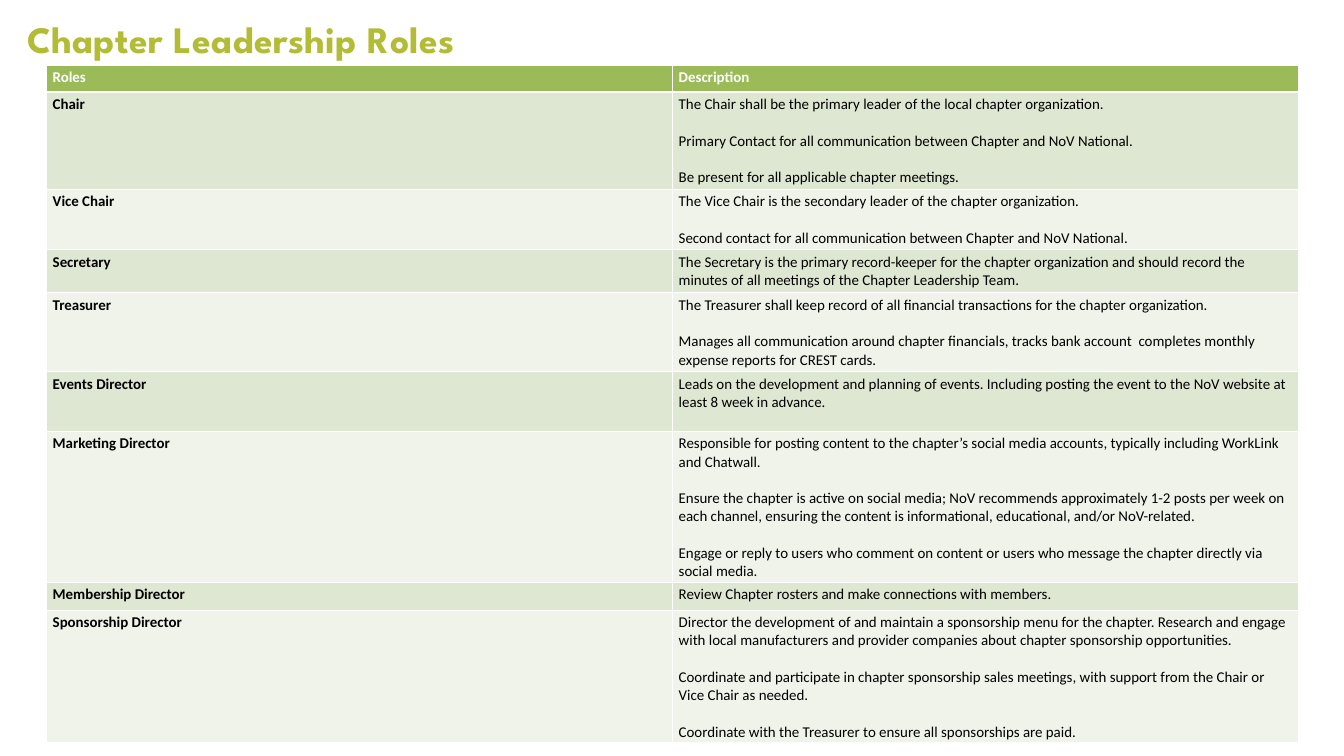
from dataclasses import dataclass

from lxml.etree import SubElement
from pptx import Presentation
from pptx.dml.color import RGBColor
from pptx.enum.text import MSO_ANCHOR, MSO_AUTO_SIZE, PP_ALIGN
from pptx.oxml.ns import qn
from pptx.util import Emu, Pt


@dataclass(frozen=True)
class Theme:
    title: str = "B3BC35"
    header: str = "9BBB59"
    bands: tuple = ("DEE7D1", "EFF3EA")
    white: str = "FFFFFF"
    black: str = "000000"
    title_font: str = "League Spartan"
    body_font: str = "Calibri"
    title_size: int = 40
    body_size: int = 16
    paragraph_gap: float = 19.5
    border: int = 1
    header_border: int = 3


THEME = Theme()

HEADER = ("Roles", ["Description"], 27)

# Role, description paragraphs, row height in px
ROLES = [
    ("Chair", [
        "The Chair shall be the primary leader of the local chapter organization.",
        "Primary Contact for all communication between Chapter and NoV National.",
        "Be present for all applicable chapter meetings."], 97),
    ("Vice Chair", [
        "The Vice Chair is the secondary leader of the chapter organization.",
        "Second contact for all communication between Chapter and NoV National."], 60),
    ("Secretary", [
        "The Secretary is the primary record-keeper for the chapter organization and should "
        "record the minutes of all meetings of the Chapter Leadership Team."], 43),
    ("Treasurer", [
        "The Treasurer shall keep record of all financial transactions for the chapter "
        "organization.",
        "Manages all communication around chapter financials, tracks bank account  completes "
        "monthly expense reports for CREST cards."], 78),
    ("Events Director", [
        "Leads on the development and planning of events. Including posting the event to the "
        "NoV website at least 8 week in advance."], 60),
    ("Marketing Director", [
        "Responsible for posting content to the chapter’s social media accounts, typically "
        "including WorkLink and Chatwall.",
        "Ensure the chapter is active on social media; NoV recommends approximately 1-2 posts "
        "per week on each channel, ensuring the content is informational, educational, and/or "
        "NoV-related.",
        "Engage or reply to users who comment on content or users who message the chapter "
        "directly via social media."], 150),
    ("Membership Director", [
        "Review Chapter rosters and make connections with members."], 28),
    ("Sponsorship Director", [
        "Director the development of and maintain a sponsorship menu for the chapter. Research "
        "and engage with local manufacturers and provider companies about chapter sponsorship "
        "opportunities.",
        "Coordinate and participate in chapter sponsorship sales meetings, with support from "
        "the Chair or Vice Chair as needed.",
        "Coordinate with the Treasurer to ensure all sponsorships are paid."], 132),
]


def px(n):
    return Emu(round(n * 914400 / 67.2))


def set_font(font, name, size, color, bold):
    font.name, font.size, font.bold = name, Pt(size), bold
    font.color.rgb = RGBColor.from_string(color)


def add_title(s, text):
    sp = s.shapes.title
    sp.left, sp.top, sp.width, sp.height = px(26), px(15), px(1218), px(46)
    tf = sp.text_frame
    tf.auto_size = MSO_AUTO_SIZE.SHAPE_TO_FIT_TEXT
    tf.vertical_anchor = MSO_ANCHOR.MIDDLE
    tf.margin_left, tf.margin_top, tf.margin_right, tf.margin_bottom = px(1), px(1), 0, 0
    p = tf.paragraphs[0]
    p.alignment = PP_ALIGN.LEFT
    p.space_before = Pt(1.5)
    set_font(p.font, THEME.title_font, THEME.title_size, THEME.title, True)
    r = p.add_run()
    r.text = text
    r._r.get_or_add_rPr().set("spc", "50")


def set_borders(cell, top, bottom):
    tcPr = cell._tc.get_or_add_tcPr()
    widths = {"L": THEME.border, "R": THEME.border, "T": top, "B": bottom}
    for side, width in widths.items():
        ln = SubElement(tcPr, qn(f"a:ln{side}"), w=str(Pt(width)))
        fill = SubElement(ln, qn("a:solidFill"))
        SubElement(fill, qn("a:srgbClr"), val=THEME.white)


def fill_cell(cell, paragraphs, fill, color, bold):
    cell.fill.solid()
    cell.fill.fore_color.rgb = RGBColor.from_string(fill)
    tf = cell.text_frame
    for i, text in enumerate(paragraphs):
        p = tf.add_paragraph() if i else tf.paragraphs[0]
        p.text = text
        if i:
            p.space_before = Pt(THEME.paragraph_gap)
        set_font(p.font, THEME.body_font, THEME.body_size, color, bold)


def add_roles_table(s, rows):
    height = sum(row[2] for row in rows)
    table = s.shapes.add_table(len(rows), 2, px(46), px(65), px(1252), px(height)).table
    for i, (role, description, row_height) in enumerate(rows):
        table.rows[i].height = px(row_height)
        is_header = i == 0
        fill = THEME.header if is_header else THEME.bands[(i - 1) % 2]
        color = THEME.white if is_header else THEME.black
        top = THEME.header_border if i == 1 else THEME.border
        bottom = THEME.header_border if is_header else THEME.border
        for j, paragraphs in enumerate(([role], description)):
            cell = table.cell(i, j)
            set_borders(cell, top, bottom)
            fill_cell(cell, paragraphs, fill, color, is_header or j == 0)


def main():
    prs = Presentation()
    prs.slide_width, prs.slide_height = px(1344), px(756)
    s = prs.slides.add_slide(prs.slide_layouts[5])

    # Title
    add_title(s, "Chapter Leadership Roles")

    # Roles and their descriptions
    add_roles_table(s, [HEADER, *ROLES])

    prs.save("out.pptx")


if __name__ == "__main__":
    main()
